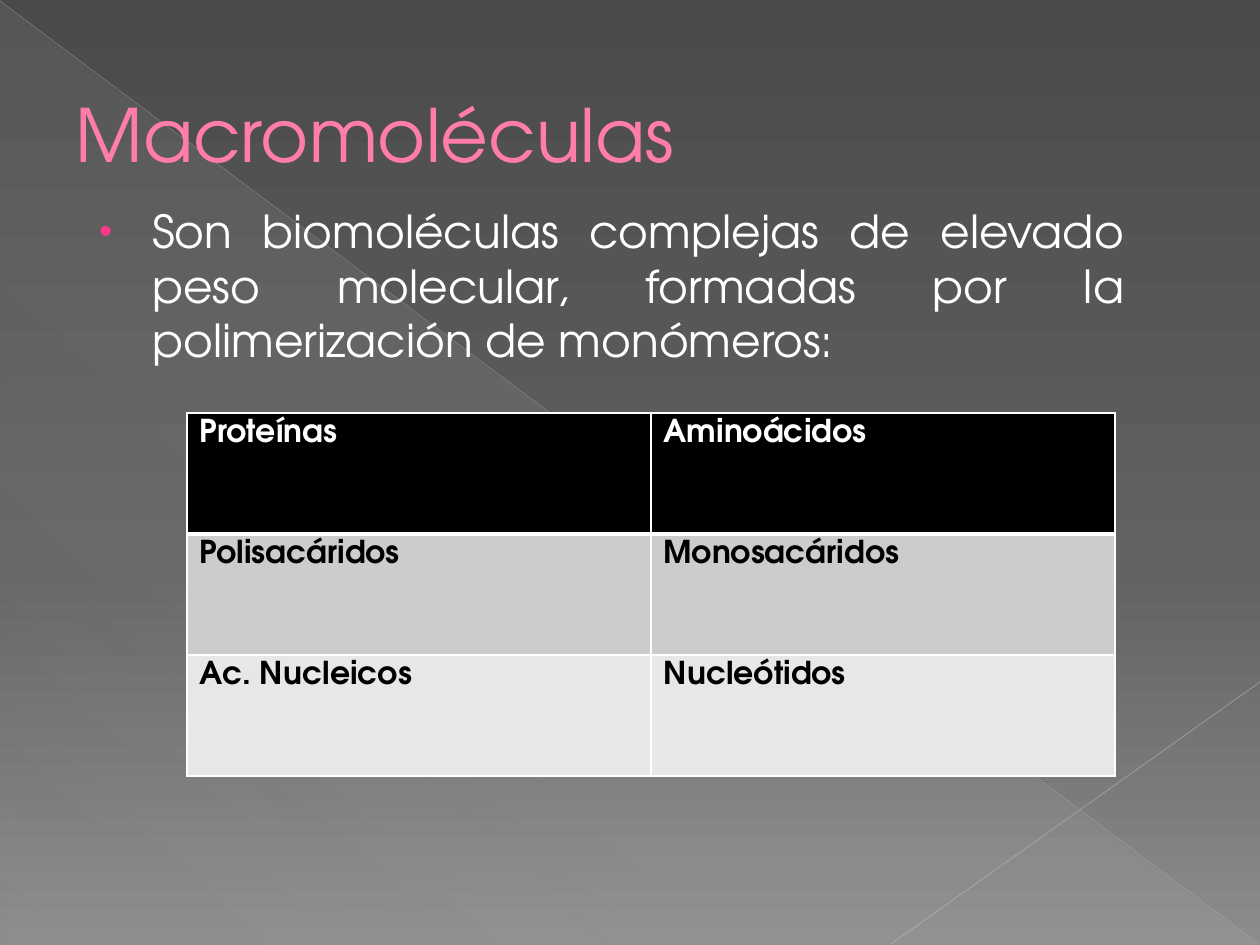
from dataclasses import dataclass

from lxml import etree
from pptx import Presentation
from pptx import util as u
from pptx.dml.color import RGBColor
from pptx.enum import shapes, text
from pptx.oxml import ns


@dataclass(frozen=True)
class Theme:
    font: str = "TeX Gyre Adventor"
    title: str = "FF7DA7"
    title_outline: str = "B12761"
    bullet: str = "FF388C"
    light: str = "FFFFFF"
    dark: str = "000000"
    row_fills: tuple = ("000000", "CCCCCC", "E7E7E7")
    triangle: str = "D2D2D2"
    diagonal: str = "BFBFBF"
    corner: str = "C6C6C6"
    title_size: int = 42
    body_size: int = 26
    table_size: int = 18


THEME = Theme()
PX = u.Inches(1) / 126  # one px in EMU
SLIDE_BOX = (0, 0, 1260, 945)
TITLE_BOX = (63, 37, 1134, 193)
BODY_BOX = (78, 197, 1060, 193)
TABLE_BOX = (187, 413, 928, 363)
ROWS = [
    ("Proteínas", "Aminoácidos"),
    ("Polisacáridos", "Monosacáridos"),
    ("Ac. Nucleicos", "Nucleótidos"),
]


def px(*lengths):
    return [u.Emu(round(length * PX)) for length in lengths]


def add_xml(parent, tag, **attributes):
    return etree.SubElement(
        parent, ns.qn(tag), {name: str(value) for name, value in attributes.items()})


def add_color(parent, color, opacity=100):
    element = add_xml(parent, "a:srgbClr", val=color)
    if opacity < 100:
        add_xml(element, "a:alpha", val=opacity * 1000)


def set_gradient(fill, parent, stops, angle):
    """Stops are (position %, colour, opacity %); angle runs clockwise."""
    fill.gradient()
    gradient = parent.find(ns.qn("a:gradFill"))
    for child in list(gradient):
        gradient.remove(child)
    stop_list = add_xml(gradient, "a:gsLst")
    for position, color, opacity in stops:
        add_color(add_xml(stop_list, "a:gs", pos=position * 1000), color, opacity)
    add_xml(gradient, "a:lin", ang=angle * 60000, scaled=0)


def style_font(font, size, color, bold=False):
    font.name = THEME.font
    font.size = u.Pt(size)
    font.bold = bold
    font.color.rgb = RGBColor.from_string(color)


def place(shape, box):
    shape.left, shape.top, shape.width, shape.height = px(*box)


def add_thin_line(slide, start, end, color, width, opacity):
    line = slide.shapes.add_connector(
        shapes.MSO_CONNECTOR.STRAIGHT, *px(*start, *end))
    line.line.width = u.Pt(width)
    line.line.color.rgb = RGBColor.from_string(color)
    properties = line._element.spPr
    color_element = properties.find(".//" + ns.qn("a:srgbClr"))
    add_xml(color_element, "a:alpha", val=opacity * 1000)
    add_xml(properties, "a:effectLst")


def draw_backdrop(slide, box):
    left, top, width, height = box
    right, bottom = left + width, top + height

    # Vertical grey gradient
    fill = slide.background.fill
    fill.solid()
    properties = slide._element.find(".//" + ns.qn("p:bgPr"))
    set_gradient(fill, properties,
                 [(0, "4A4A4A", 100), (60, "626262", 100), (100, "8C8C8C", 100)], 90)

    # Translucent triangle
    triangle = slide.shapes.add_shape(
        shapes.MSO_SHAPE.RIGHT_TRIANGLE, *px(left + 1, top + 2, width - 2, height - 2))
    triangle.shadow.inherit = False
    triangle.line.fill.background()
    set_gradient(triangle.fill, triangle._element.spPr,
                 [(0, THEME.triangle, 10), (70, THEME.triangle, 8),
                  (100, THEME.triangle, 1)], 133)

    # Diagonal and corner lines
    add_thin_line(slide, (left, top + 1), (right - 1, bottom - 1),
                  THEME.diagonal, 0.39, 35)
    add_thin_line(slide, (right, top + 682), (left + 891, bottom - 1),
                  THEME.corner, 0.47, 45)


def fill_placeholder(slide, shape, box, words, anchor, alignment):
    slide.shapes._spTree.append(shape._element)  # bring above the backdrop
    place(shape, box)
    frame = shape.text_frame
    frame.text = words
    frame.word_wrap = True
    frame.auto_size = text.MSO_AUTO_SIZE.NONE
    frame.vertical_anchor = anchor
    paragraph = frame.paragraphs[0]
    paragraph.alignment = alignment
    return paragraph


def draw_title(slide, box):
    paragraph = fill_placeholder(slide, slide.shapes.title, box, "Macromoléculas",
                                 text.MSO_ANCHOR.MIDDLE, text.PP_ALIGN.LEFT)
    style_font(paragraph.font, THEME.title_size, THEME.title)
    # Thin outline around the letters
    run_defaults = paragraph._p.pPr.find(ns.qn("a:defRPr"))
    outline = add_xml(run_defaults, "a:ln", w=u.Pt(0.5))
    add_color(add_xml(outline, "a:solidFill"), THEME.title_outline)
    run_defaults.insert(0, outline)


def draw_body(slide, box):
    paragraph = fill_placeholder(
        slide, slide.placeholders[1], box,
        "Son biomoléculas complejas de elevado peso molecular, "
        "formadas por la polimerización de monómeros:",
        text.MSO_ANCHOR.TOP, text.PP_ALIGN.JUSTIFY)
    # Hanging pink bullet
    properties = paragraph._p.get_or_add_pPr()
    properties.set("marL", str(u.Inches(0.49)))
    properties.set("indent", str(u.Inches(-0.42)))
    add_color(add_xml(properties, "a:buClr"), THEME.bullet)
    add_xml(properties, "a:buSzPct", val=80000)
    add_xml(properties, "a:buFont", typeface="Arial")
    add_xml(properties, "a:buChar", char="•")
    style_font(paragraph.font, THEME.body_size, THEME.light)


def set_borders(cell, top, bottom):
    properties = cell._tc.get_or_add_tcPr()
    for tag, width in (("a:lnL", 1), ("a:lnR", 1), ("a:lnT", top), ("a:lnB", bottom)):
        border = add_xml(properties, tag, w=u.Pt(width))
        add_color(add_xml(border, "a:solidFill"), THEME.light)


def draw_table(slide, box):
    table = slide.shapes.add_table(len(ROWS), len(ROWS[0]), *px(*box)).table
    for row_index, row in enumerate(ROWS):
        header = row_index == 0
        for column_index, words in enumerate(row):
            cell = table.cell(row_index, column_index)
            cell.text = words
            # A thick rule separates the header from the rows
            set_borders(cell, top=3 if row_index == 1 else 1, bottom=3 if header else 1)
            cell.fill.solid()
            cell.fill.fore_color.rgb = RGBColor.from_string(THEME.row_fills[row_index])
            style_font(cell.text_frame.paragraphs[0].font, THEME.table_size,
                       THEME.light if header else THEME.dark, bold=True)


def main():
    presentation = Presentation()
    presentation.slide_width, presentation.slide_height = px(*SLIDE_BOX[2:])
    slide = presentation.slides.add_slide(presentation.slide_layouts[1])
    draw_backdrop(slide, SLIDE_BOX)
    draw_title(slide, TITLE_BOX)
    draw_body(slide, BODY_BOX)
    draw_table(slide, TABLE_BOX)
    presentation.save("out.pptx")


if __name__ == "__main__":
    main()
